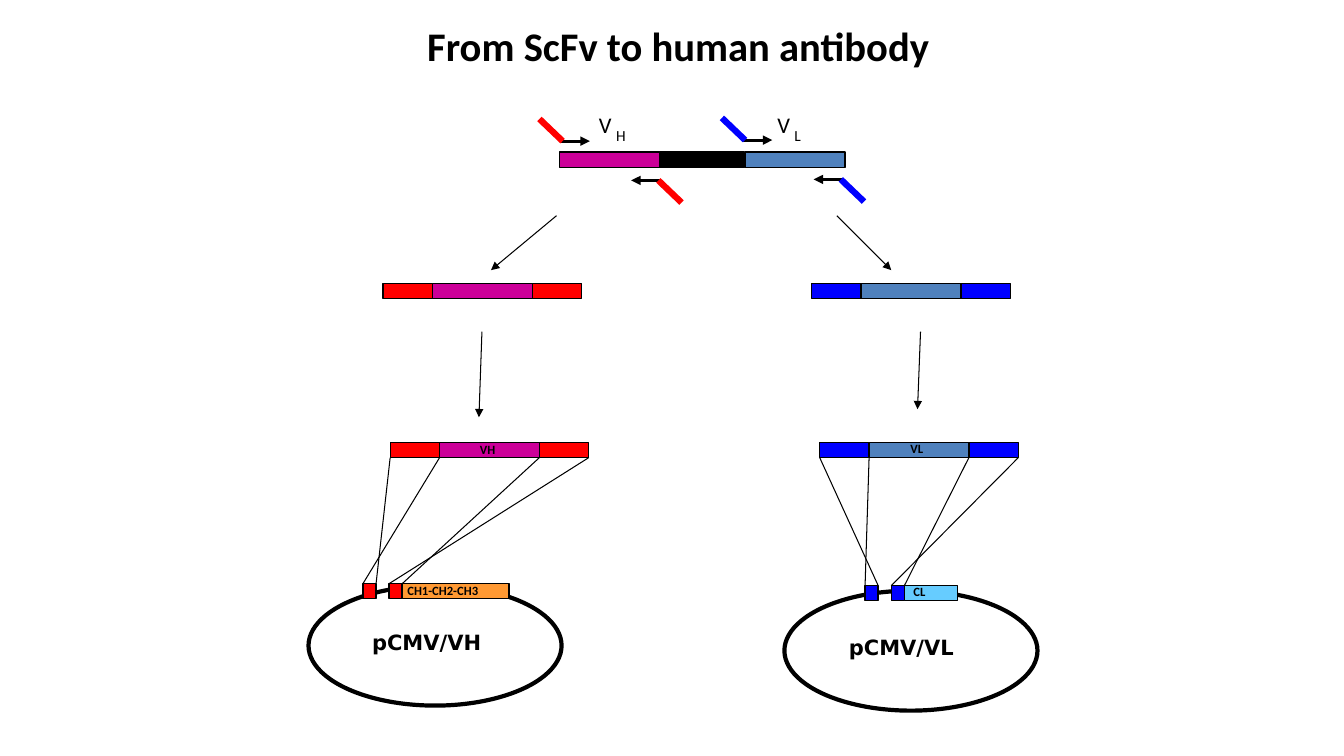
from dataclasses import dataclass

from lxml.etree import SubElement
from pptx import Presentation
from pptx.dml.color import RGBColor
from pptx.enum.shapes import MSO_CONNECTOR, MSO_SHAPE
from pptx.enum.text import MSO_ANCHOR, PP_ALIGN
from pptx.oxml.ns import qn
from pptx.util import Inches, Pt


@dataclass(frozen=True)
class Theme:
    ink: str = "000000"
    heavy: str = "CC0099"
    heavy_flank: str = "FF0000"
    heavy_constant: str = "FF9933"
    light: str = "4F81BD"
    light_flank: str = "0000FF"
    light_constant: str = "66CCFF"
    font: str = "Calibri"
    plasmid_font: str = "DejaVu Sans"
    title_size: float = 29
    gene_size: float = 16
    plasmid_size: float = 15
    subscript_size: float = 11
    label_size: float = 9
    hairline: float = 0.75
    outline: float = 1
    primer_arrow: float = 2.25
    plasmid_line: float = 3
    primer_tail: float = 4.5


@dataclass(frozen=True)
class Chain:
    name: str
    gene_color: str
    flank_color: str
    constant: str
    constant_color: str
    constant_width: float
    product_left: float
    insert_left: float
    slot: tuple
    ring: tuple
    insert_label: tuple
    constant_label: tuple
    plasmid_label: tuple


THEME = Theme()
BAR_HEIGHT = 0.15
GENE_WIDTH = 0.99
FLANK_WIDTH = 0.49
SLOT_WIDTH = 0.13
PRODUCT_TOP = 2.81
INSERT_TOP = 4.39

CHAINS = (
    Chain("VH", THEME.heavy, THEME.heavy_flank, "CH1-CH2-CH3", THEME.heavy_constant, 1.06,
          3.8, 3.87, (3.6, 5.79), (3.06, 5.81),
          (4.67, 4.34, 0.4), (3.95, 5.74, 0.95), (3.6, 6.21, 1.32)),
    Chain("VL", THEME.light, THEME.light_flank, "CL", THEME.light_constant, 0.53,
          8.05, 8.13, (8.58, 5.81), (7.78, 5.86),
          (8.94, 4.33, 0.4), (8.97, 5.75, 0.4), (8.33, 6.26, 1.28)),
)


def color(code):
    return RGBColor.from_string(code)


def write(frame, text, *, size, font=THEME.font, bold=False, align=PP_ALIGN.LEFT,
          anchor=MSO_ANCHOR.TOP, inset=(0.09, 0.04), wrap=True):
    frame.word_wrap = wrap
    frame.vertical_anchor = anchor
    frame.margin_left = frame.margin_right = Inches(inset[0])
    frame.margin_top = frame.margin_bottom = Inches(inset[1])
    para = frame.paragraphs[0]
    para.alignment = align
    span = para.add_run()
    span.text = text
    span.font.size = Pt(size)
    span.font.name = font
    span.font.bold = bold
    span.font.color.rgb = color(THEME.ink)


def add_label(page, text, place, height, **style):
    left, top, width = place
    box = page.shapes.add_textbox(Inches(left), Inches(top), Inches(width), Inches(height))
    write(box.text_frame, text, wrap=False, **style)


def add_block(page, left, top, width, fill=None, *, height=BAR_HEIGHT,
              kind=MSO_SHAPE.RECTANGLE, weight=THEME.outline):
    block = page.shapes.add_shape(kind, Inches(left), Inches(top), Inches(width), Inches(height))
    block.shadow.inherit = False
    if fill:
        block.fill.solid()
        block.fill.fore_color.rgb = color(fill)
    else:
        block.fill.background()
    block.line.color.rgb = color(THEME.ink)
    block.line.width = Pt(weight)


def add_line(page, start, end, *, stroke=THEME.ink, weight=THEME.hairline, arrow=False):
    points = [Inches(value) for value in (*start, *end)]
    line = page.shapes.add_connector(MSO_CONNECTOR.STRAIGHT, *points)
    line.line.color.rgb = color(stroke)
    line.line.width = Pt(weight)
    if arrow:
        SubElement(line.get_or_add_ln(), qn("a:tailEnd"), type="triangle")
    SubElement(line.element.spPr, qn("a:effectLst"))


def add_primer(page, x, y, direction, stroke):
    """Draw an arrow and its overhang; direction is 1 for forward, -1 for reverse."""
    add_line(page, (x - 0.03 * direction, y), (x + 0.27 * direction, y),
             weight=THEME.primer_arrow, arrow=True)
    add_line(page, (x, y), (x - 0.23 * direction, y - 0.22 * direction),
             stroke=stroke, weight=THEME.primer_tail)


def add_flanked_gene(page, left, top, chain):
    add_block(page, left + FLANK_WIDTH, top, GENE_WIDTH, chain.gene_color)
    for flank_left in (left, left + FLANK_WIDTH + GENE_WIDTH):
        add_block(page, flank_left, top, FLANK_WIDTH, chain.flank_color)


def add_plasmid(page, chain):
    left, top = chain.slot
    add_block(page, *chain.ring, 2.51, height=1.19, kind=MSO_SHAPE.OVAL,
              weight=THEME.plasmid_line)
    for step in (0, 2):
        add_block(page, left + step * SLOT_WIDTH, top, SLOT_WIDTH, chain.flank_color)
    add_block(page, left + 3 * SLOT_WIDTH, top, chain.constant_width, chain.constant_color)
    add_label(page, chain.constant, chain.constant_label, 0.24,
              size=THEME.label_size, bold=True)
    add_label(page, f"pCMV/{chain.name}", chain.plasmid_label, 0.34,
              size=THEME.plasmid_size, font=THEME.plasmid_font, bold=True)


def add_crossovers(page, chain):
    """Join the edges of both flanks to the crossed edges of the plasmid slots."""
    left, top = chain.slot
    gene_end = FLANK_WIDTH + GENE_WIDTH
    edges = (0, FLANK_WIDTH, gene_end, gene_end + FLANK_WIDTH)
    for edge, step in zip(edges, (1, 0, 3, 2)):
        add_line(page, (chain.insert_left + edge, INSERT_TOP + BAR_HEIGHT),
                 (left + step * SLOT_WIDTH, top))


def add_scfv(page):
    add_block(page, 5.55, 1.51, GENE_WIDTH, THEME.heavy)
    add_block(page, 7.39, 1.51, GENE_WIDTH, THEME.light)
    add_block(page, 6.54, 1.51, 0.84, THEME.ink)
    for subscript, left in (("H", 5.94), ("L", 7.71)):
        add_label(page, "V", (left, 1.1, 0.15), 0.27, size=THEME.gene_size, inset=(0, 0))
        add_label(page, subscript, (left + 0.17, 1.25, 0.15), 0.19,
                  size=THEME.subscript_size, inset=(0, 0))
    for x, y, direction, stroke in (
        (5.58, 1.4, 1, THEME.heavy_flank),
        (6.53, 1.79, -1, THEME.heavy_flank),
        (7.39, 1.39, 1, THEME.light_flank),
        (8.34, 1.78, -1, THEME.light_flank),
    ):
        add_primer(page, x, y, direction, stroke)


def add_title(page, text):
    title = page.shapes.title
    title.left, title.top = Inches(2.02), Inches(-0.25)
    title.width, title.height = Inches(9.42), Inches(1.4)
    write(title.text_frame, text, size=THEME.title_size, bold=True,
          align=PP_ALIGN.CENTER, anchor=MSO_ANCHOR.MIDDLE)


def main():
    deck = Presentation()
    deck.slide_width, deck.slide_height = Inches(13.33), Inches(7.5)
    page = deck.slides.add_slide(deck.slide_layouts[5])
    add_title(page, "From ScFv to human antibody")
    add_scfv(page)
    for chain in CHAINS:
        add_flanked_gene(page, chain.product_left, PRODUCT_TOP, chain)
        add_flanked_gene(page, chain.insert_left, INSERT_TOP, chain)
        add_label(page, chain.name, chain.insert_label, 0.24,
                  size=THEME.label_size, bold=True)
        add_plasmid(page, chain)
        add_crossovers(page, chain)
    for start, end in (
        ((5.52, 2.14), (4.87, 2.68)),
        ((8.3, 2.14), (8.84, 2.68)),
        ((4.78, 3.29), (4.75, 4.14)),
        ((9.13, 3.29), (9.1, 4.06)),
    ):
        add_line(page, start, end, arrow=True)
    deck.save("out.pptx")


if __name__ == "__main__":
    main()
